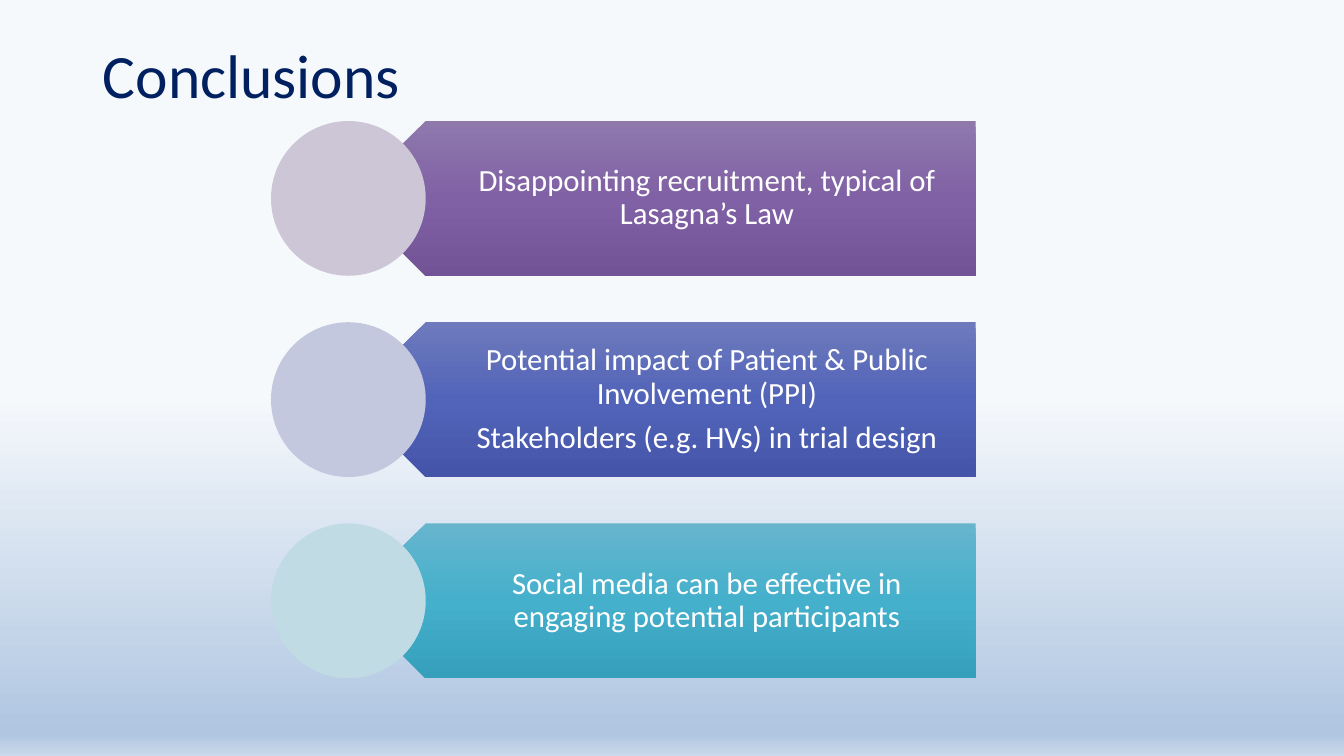
from lxml import etree
from pptx import Presentation
from pptx.dml.color import RGBColor
from pptx.enum.shapes import MSO_SHAPE
from pptx.enum.text import MSO_ANCHOR, PP_ALIGN
from pptx.oxml.ns import qn
from pptx.util import Cm, Pt

OVAL = MSO_SHAPE.OVAL
MIDDLE = MSO_ANCHOR.MIDDLE
TOP = MSO_ANCHOR.TOP
CENTER = PP_ALIGN.CENTER
LEFT = PP_ALIGN.LEFT

FONT = "Calibri"
NAVY = RGBColor(0x00, 0x20, 0x60)
WHITE = RGBColor(0xFF, 0xFF, 0xFF)
PALE = RGBColor(0xF6, 0xF9, 0xFC)
MIST = RGBColor(0xB0, 0xC6, 0xE1)
HAZE = RGBColor(0xCA, 0xD9, 0xEB)
PURPLES = [RGBColor(0x8E, 0x78, 0xAC), RGBColor(0x80, 0x61, 0xA5), RGBColor(0x71, 0x53, 0x96)]
BLUES = [RGBColor(0x6E, 0x7A, 0xBC), RGBColor(0x52, 0x64, 0xB9), RGBColor(0x44, 0x55, 0xA9)]
TEALS = [RGBColor(0x66, 0xB5, 0xCD), RGBColor(0x45, 0xB0, 0xCC), RGBColor(0x36, 0xA0, 0xBC)]
LILAC = RGBColor(0xCD, 0xC6, 0xD7)
PERIWINKLE = RGBColor(0xC3, 0xC8, 0xDE)
AQUA = RGBColor(0xC1, 0xDB, 0xE5)

CIRCLE_LEFT = 6.83
DIAMETER = 3.9
BAR_RIGHT = 24.59
FIRST_TOP = 3.05
ROW_PITCH = 5.07

CONCLUSIONS = [
    (["Disappointing recruitment, typical of Lasagna’s Law"], PURPLES, LILAC),
    (["Potential impact of Patient & Public Involvement (PPI)",
      "Stakeholders (e.g. HVs) in trial design"], BLUES, PERIWINKLE),
    (["Social media can be effective in engaging potential participants"], TEALS, AQUA),
]


def fill_downward(fill, element, stops):
    fill.gradient()
    fill.gradient_angle = 270
    stop_list = next(element.iter(qn("a:gsLst")))
    for old_stop in list(stop_list):
        stop_list.remove(old_stop)
    for percent, color in stops:
        stop = etree.SubElement(stop_list, qn("a:gs"), pos=str(percent * 1000))
        etree.SubElement(stop, qn("a:srgbClr"), val=str(color))


def write_text(frame, lines, size, color, align, anchor, space_after=0):
    frame.word_wrap = True
    frame.vertical_anchor = anchor
    frame.text = "\n".join(lines)
    for para in frame.paragraphs:
        para.alignment = align
        para.line_spacing = 0.9
        para.space_after = Pt(space_after)
        for span in para.runs:
            span.font.name = FONT
            span.font.size = Pt(size)
            span.font.color.rgb = color


def add_title(page, text):
    box = page.shapes.add_textbox(Cm(2.34), Cm(1.02), Cm(24.79), Cm(3.68))
    write_text(box.text_frame, [text], 44, NAVY, LEFT, TOP)


def add_bar(page, top, lines, colors):
    tip = CIRCLE_LEFT + DIAMETER / 2
    shoulder = CIRCLE_LEFT + DIAMETER
    bottom = top + DIAMETER
    corners = [(shoulder, bottom), (tip, top + DIAMETER / 2), (shoulder, top), (BAR_RIGHT, top)]
    builder = page.shapes.build_freeform(Cm(BAR_RIGHT), Cm(bottom))
    builder.add_line_segments([(Cm(x), Cm(y)) for x, y in corners], close=True)
    bar = builder.convert_to_shape()
    bar.shadow.inherit = False
    bar.line.fill.background()
    fill_downward(bar.fill, bar.element, zip((0, 50, 100), colors))
    frame = bar.text_frame
    frame.margin_left, frame.margin_right = Cm(2.69), Cm(0.43)
    frame.margin_top = frame.margin_bottom = Cm(0.23)
    write_text(frame, lines, 22, WHITE, CENTER, MIDDLE, 7.7)


def add_circle(page, top, color):
    circle = page.shapes.add_shape(OVAL, Cm(CIRCLE_LEFT), Cm(top), Cm(DIAMETER), Cm(DIAMETER))
    circle.shadow.inherit = False
    circle.fill.solid()
    circle.fill.fore_color.rgb = color
    circle.line.fill.background()


def main():
    deck = Presentation()
    deck.slide_width, deck.slide_height = Cm(33.87), Cm(19.05)
    page = deck.slides.add_slide(deck.slide_layouts[6])
    fill_downward(page.background.fill, page.element, [(52, PALE), (97, MIST), (100, HAZE)])
    add_title(page, "Conclusions")
    for row, (lines, bar_colors, circle_color) in enumerate(CONCLUSIONS):
        top = FIRST_TOP + row * ROW_PITCH
        add_bar(page, top, lines, bar_colors)
        add_circle(page, top, circle_color)
    deck.save("out.pptx")


if __name__ == "__main__":
    main()
